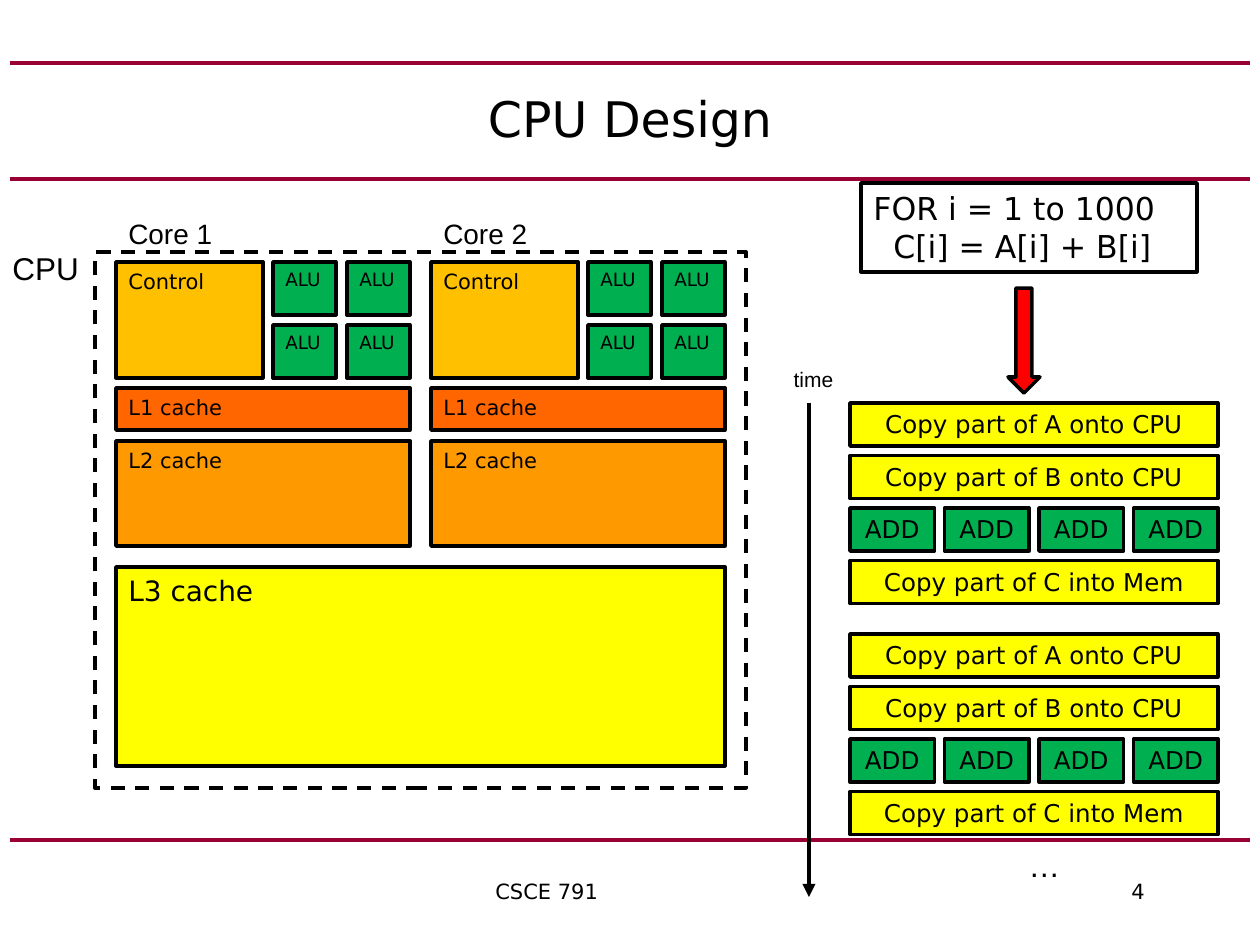
from lxml.etree import SubElement
from pptx import Presentation
from pptx.dml.color import RGBColor
from pptx.enum.dml import MSO_LINE
from pptx.enum.shapes import MSO_CONNECTOR, MSO_SHAPE as SHAPE
from pptx.enum.text import MSO_ANCHOR as ANCHOR, PP_ALIGN as ALIGN
from pptx.oxml.ns import qn
from pptx.util import Emu, Pt

BLACK = RGBColor(0x00, 0x00, 0x00)
WHITE = RGBColor(0xFF, 0xFF, 0xFF)
MAROON = RGBColor(0x99, 0x00, 0x33)
GREEN = RGBColor(0x00, 0xB0, 0x50)
GOLD = RGBColor(0xFF, 0xC0, 0x00)
DARK_ORANGE = RGBColor(0xFF, 0x66, 0x00)
ORANGE = RGBColor(0xFF, 0x99, 0x00)
YELLOW = RGBColor(0xFF, 0xFF, 0x00)
RED = RGBColor(0xFF, 0x00, 0x00)
SANS, ARIAL = "DejaVu Sans", "Arial"

RULES = [840, 179, 63]
CORES = ["Core 1", "Core 2"]
CORE_LEFT, CORE_TOP, CORE_PITCH = 116, 262, 315
CORE_PARTS = [
    ("Control", 0, 147, 116, GOLD),
    ("L1 cache", 126, 294, 42, DARK_ORANGE),
    ("L2 cache", 179, 294, 105, ORANGE),
]
ALU_LEFT, ALU_PITCH_X, ALU_PITCH_Y = 157, 74, 63
LOOP = "FOR i = 1 to 1000\n  C[i] = A[i] + B[i]"
STEPS = [
    ["Copy part of A onto CPU"],
    ["Copy part of B onto CPU"],
    ["ADD"] * 4,
    ["Copy part of C into Mem"],
]
PASS_TOPS = [403, 634]
STEP_LEFT, STEP_WIDTH, STEP_HEIGHT, STEP_PITCH, STEP_GAP = 850, 368, 43, 52.5, 10
FOOTER = "\tCSCE 791\t4"
FOOTER_STOPS = [126, 762]


def px(length):
    return Emu(round(length * 914400 / 126))


def add_box(slide, box, fill=None, kind=SHAPE.RECTANGLE, dash=None):
    shape = slide.shapes.add_shape(kind, *map(px, box))
    shape.shadow.inherit = False
    if fill is None:
        shape.fill.background()
    else:
        shape.fill.solid()
        shape.fill.fore_color.rgb = fill
    shape.line.color.rgb = BLACK
    shape.line.width = Pt(2)
    if dash is not None:
        shape.line.dash_style = dash
    return shape


def add_text(slide, text, box, fill=None, size=12, font=SANS, align=ALIGN.LEFT,
             anchor=ANCHOR.TOP, stops=()):
    if fill is None:
        holder = slide.shapes.add_textbox(*map(px, box))
    else:
        holder = add_box(slide, box, fill)
    frame = holder.text_frame
    frame.word_wrap = True
    frame.vertical_anchor = anchor
    frame.text = text
    for paragraph in frame.paragraphs:
        paragraph.alignment = align
        if stops:
            tabs = SubElement(paragraph._p.get_or_add_pPr(), qn("a:tabLst"))
            for stop in stops:
                SubElement(tabs, qn("a:tab"), pos=str(px(stop)), algn="l")
        for run in paragraph.runs:
            run.font.size = Pt(size)
            run.font.name = font
            run.font.color.rgb = BLACK


def add_line(slide, start, end, color, width, arrow=False):
    line = slide.shapes.add_connector(MSO_CONNECTOR.STRAIGHT, *map(px, start + end))
    line.line.color.rgb = color
    line.line.width = Pt(width)
    if arrow:
        SubElement(line.line._get_or_add_ln(), qn("a:tailEnd"), type="triangle")
    SubElement(line._element.spPr, qn("a:effectLst"))


def add_cores(slide):
    for index, core in enumerate(CORES):
        left = CORE_LEFT + index * CORE_PITCH
        for row in range(2):
            for column in range(2):
                alu = (left + ALU_LEFT + column * ALU_PITCH_X,
                       CORE_TOP + row * ALU_PITCH_Y, 63, 53)
                add_text(slide, "ALU", alu, GREEN, size=10.5)
        for part, offset, width, height, color in CORE_PARTS:
            add_text(slide, part, (left, CORE_TOP + offset, width, height), color)
        add_text(slide, core, (left, 210, 136, 47), size=16, font=ARIAL)


def add_passes(slide):
    for pass_top in PASS_TOPS:
        for row, labels in enumerate(STEPS):
            top = pass_top + row * STEP_PITCH
            pitch = (STEP_WIDTH + STEP_GAP) / len(labels)
            color = GREEN if len(labels) > 1 else YELLOW
            for column, label in enumerate(labels):
                step = (STEP_LEFT + column * pitch, top, pitch - STEP_GAP, STEP_HEIGHT)
                add_text(slide, label, step, color, size=14, align=ALIGN.CENTER)


def main():
    """Build the CPU design slide."""
    deck = Presentation()
    deck.slide_width, deck.slide_height = px(1260), px(945)
    slide = deck.slides.add_slide(deck.slide_layouts[6])

    for height in RULES:
        add_line(slide, (10, height), (1250, height), MAROON, 2.25)
    add_text(slide, "CPU Design", (63, 63, 1134, 110), size=28,
             align=ALIGN.CENTER, anchor=ANCHOR.MIDDLE)

    add_cores(slide)
    add_text(slide, "L3 cache", (CORE_LEFT, 567, 609, 199), YELLOW, size=16)
    add_box(slide, (95, 252, 651, 536), dash=MSO_LINE.DASH)
    add_text(slide, "CPU", (0, 243, 95, 50), size=18, font=ARIAL)

    add_text(slide, LOOP, (861, 183, 336, 89), WHITE, size=18)
    add_box(slide, (1008, 288, 32, 105), RED, SHAPE.DOWN_ARROW)
    add_passes(slide)
    add_text(slide, "time", (777, 360, 73, 38), font=ARIAL, align=ALIGN.CENTER)
    add_line(slide, (809, 403), (809, 897), BLACK, 2.5, arrow=True)
    add_text(slide, "…", (955, 840, 179, 50), size=18, font=ARIAL, align=ALIGN.CENTER)
    add_text(slide, FOOTER, (357, 872, 882, 42), stops=FOOTER_STOPS)
    deck.save("out.pptx")


if __name__ == "__main__":
    main()
